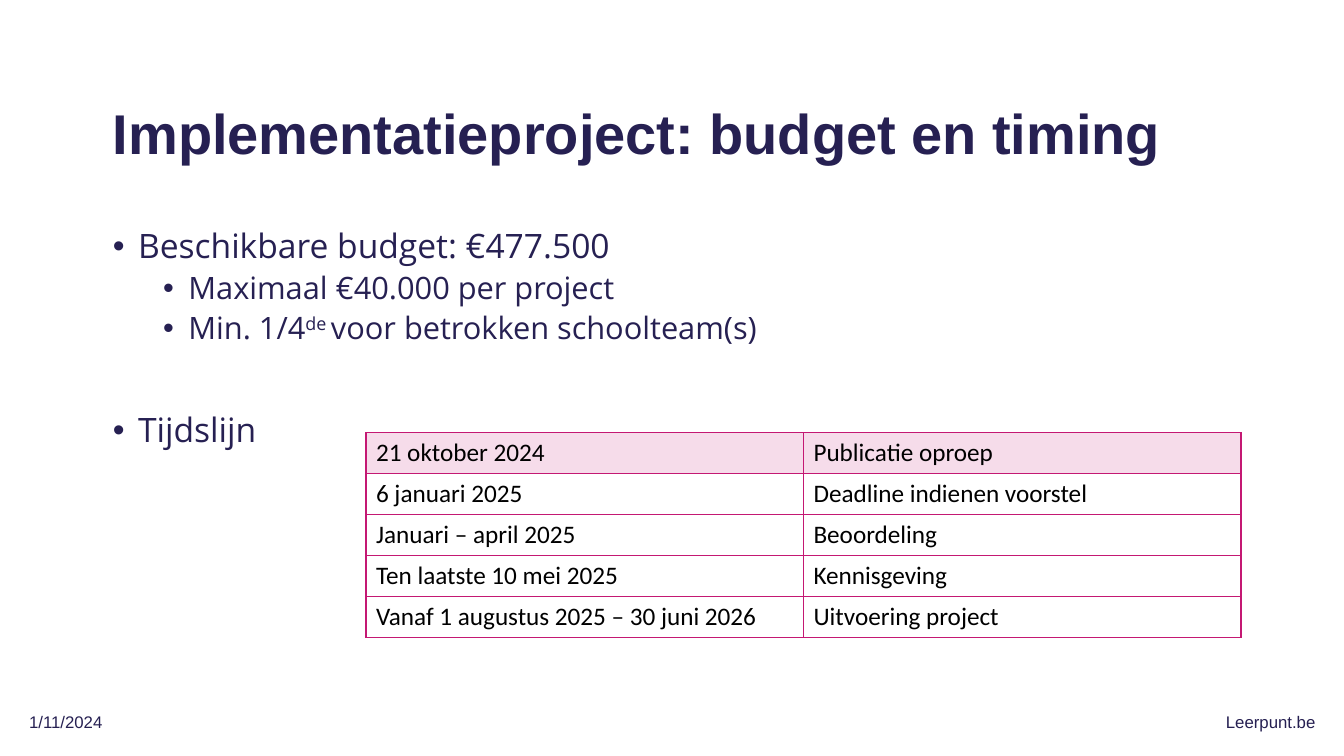
from dataclasses import dataclass

from lxml import etree
from pptx import Presentation
from pptx.dml.color import RGBColor
from pptx.enum.text import MSO_ANCHOR, MSO_AUTO_SIZE, PP_ALIGN
from pptx.oxml.ns import qn
from pptx.util import Pt

LEFT, RIGHT = PP_ALIGN.LEFT, PP_ALIGN.RIGHT
MIDDLE, TOP = MSO_ANCHOR.MIDDLE, MSO_ANCHOR.TOP
NO_AUTOFIT = MSO_AUTO_SIZE.NONE

NAVY = RGBColor(0x26, 0x20, 0x52)
MAGENTA = RGBColor(0xC4, 0x18, 0x73)
BLACK = RGBColor(0, 0, 0)


@dataclass
class Bullet:
    texts: list[str]  # every second text is superscript
    level: int = 0
    before: float = 0


@dataclass
class FooterText:
    text: str
    left: float
    align: PP_ALIGN


BULLETS = [
    Bullet(["Beschikbare budget: €477.500"]),
    Bullet(["Maximaal €40.000 per project"], 1, 5),
    Bullet(["Min. 1/4", "de ", "voor betrokken schoolteam(s)"], 1, 5),
    Bullet(["Tijdslijn"], 0, 48),
]
LEVEL_SIZES = [24, 22]
FOOTERS = [
    FooterText("1/11/2024", 13.7, LEFT),
    FooterText("Leerpunt.be", 730.8, RIGHT),
]
TIMELINE = [
    ("", ""),
    ("21 oktober 2024", "Publicatie oproep"),
    ("6 januari 2025", "Deadline indienen voorstel"),
    ("Januari – april 2025", "Beoordeling"),
    ("Ten laatste 10 mei 2025", "Kennisgeving"),
    ("Vanaf 1 augustus 2025 – 30 juni 2026", "Uitvoering project"),
]
ROW_HEIGHT, COL_WIDTH = 29.2, 312.5


def place(sp, left: float, top: float, width: float, height: float) -> None:
    sp.left, sp.top, sp.width, sp.height = Pt(left), Pt(top), Pt(width), Pt(height)


def style(font, name: str, size: float, color: RGBColor, bold: bool = False) -> None:
    font.name, font.size, font.bold = name, Pt(size), bold
    font.color.rgb = color


def add_bullet(p, item: Bullet) -> None:
    pPr = p._p.get_or_add_pPr()
    pPr.set("marL", str(Pt(18 + 36 * item.level)))
    pPr.set("indent", str(Pt(-18)))
    p.level = item.level
    p.line_spacing = 0.9
    p.space_before = Pt(item.before)
    etree.SubElement(pPr, qn("a:buFont"), typeface="Arial")
    etree.SubElement(pPr, qn("a:buChar"), char="•")
    for i, text in enumerate(item.texts):
        r = p.add_run()
        r.text = text
        style(r.font, "Open Sans", LEVEL_SIZES[item.level], NAVY)
        if i % 2:
            r._r.get_or_add_rPr().set("baseline", "30000")


def add_borders(cell, sides: str) -> None:
    tcPr = cell._tc.get_or_add_tcPr()
    for side in sides:
        ln = etree.SubElement(tcPr, qn(f"a:ln{side}"), w=str(Pt(1)))
        fill = etree.SubElement(ln, qn("a:solidFill"))
        etree.SubElement(fill, qn("a:srgbClr"), val=str(MAGENTA))


def fill_tint(cell, percent: int) -> None:
    cell.fill.solid()
    cell.fill.fore_color.rgb = MAGENTA
    color = cell._tc.tcPr.find(qn("a:solidFill")).find(qn("a:srgbClr"))
    etree.SubElement(color, qn("a:alpha"), val=str(percent * 1000))


def add_timeline(slide) -> None:
    frame = slide.shapes.add_table(
        len(TIMELINE), 2, Pt(261.4), Pt(280), Pt(2 * COL_WIDTH), Pt(ROW_HEIGHT * len(TIMELINE)))
    table = frame.table
    table.first_row = table.horz_banding = False
    for col in table.columns:
        col.width = Pt(COL_WIDTH)
    for i, texts in enumerate(TIMELINE):
        table.rows[i].height = Pt(ROW_HEIGHT)
        for cell, text in zip(table.rows[i].cells, texts):
            add_borders(cell, "LRTB" if text else "B")
            if i == 1:
                fill_tint(cell, 15)
            else:
                cell.fill.background()
            p = cell.text_frame.paragraphs[0]
            p.text = text
            for r in p.runs:
                style(r.font, "Calibri", 18, BLACK)


def add_footer(slide, item: FooterText) -> None:
    sp = slide.shapes.add_textbox(Pt(item.left), Pt(501.1), Pt(216), Pt(28.8))
    tf = sp.text_frame
    tf.word_wrap = True
    tf.vertical_anchor = MIDDLE
    p = tf.paragraphs[0]
    p.text = item.text
    p.alignment = item.align
    style(p.runs[0].font, "Arial", 12, NAVY)


def main() -> None:
    prs = Presentation()
    prs.slide_width, prs.slide_height = Pt(960), Pt(540)
    slide = prs.slides.add_slide(prs.slide_layouts[1])

    # Footer
    for item in FOOTERS:
        add_footer(slide, item)

    # Title
    title = slide.shapes.title
    place(title, 73.4, 45.4, 812.2, 104.4)
    tf = title.text_frame
    tf.text = "Implementatieproject: budget en timing"
    tf.auto_size = NO_AUTOFIT
    tf.vertical_anchor = MIDDLE
    p = tf.paragraphs[0]
    p.alignment = LEFT
    p.line_spacing = 0.9
    style(p.runs[0].font, "Arial", 40, NAVY, True)

    # Bullet list
    body = slide.placeholders[1]
    place(body, 73.4, 160.6, 812.9, 330.5)
    tf = body.text_frame
    tf.auto_size = NO_AUTOFIT
    tf.vertical_anchor = TOP
    for i, item in enumerate(BULLETS):
        add_bullet(tf.add_paragraph() if i else tf.paragraphs[0], item)

    # Timeline table
    add_timeline(slide)

    prs.save("out.pptx")


if __name__ == "__main__":
    main()
